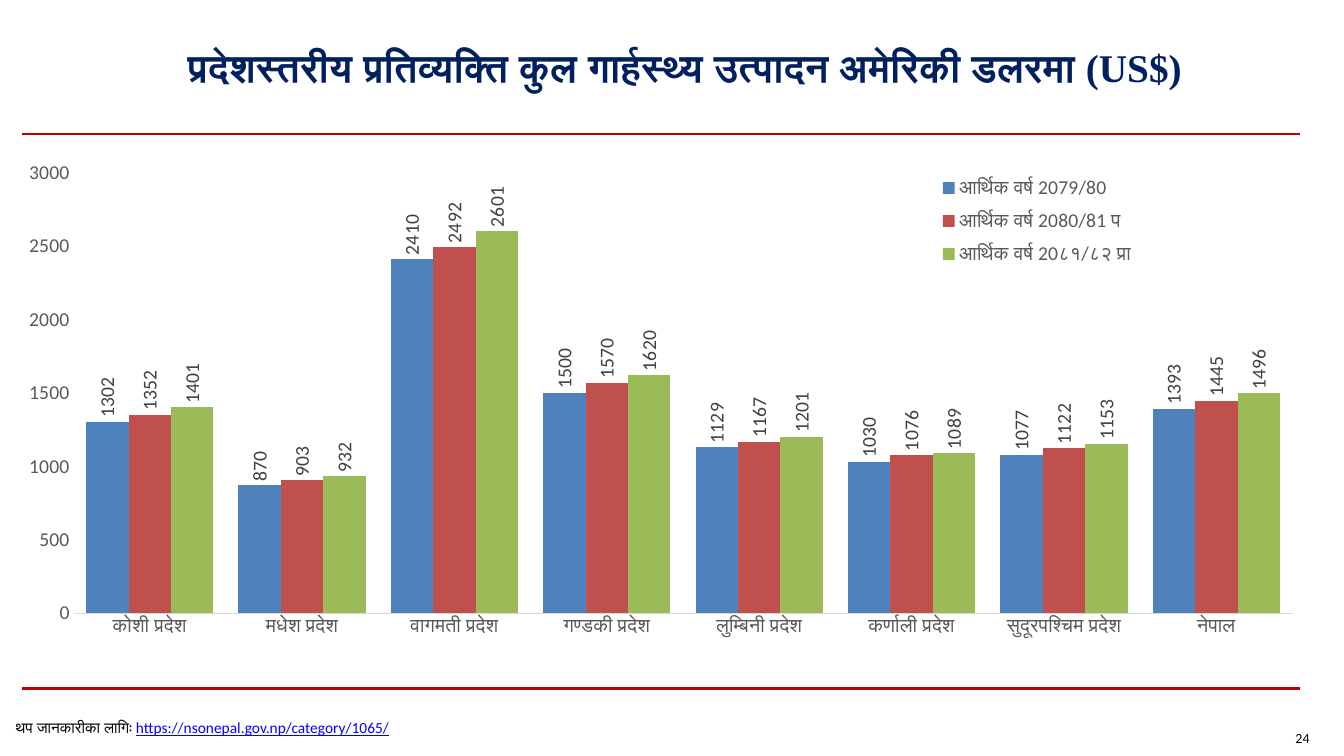
"""Build the slide on provincial GDP per person in US dollars."""
from lxml import etree
from pptx import Presentation
from pptx.chart.data import CategoryChartData
from pptx.dml.color import RGBColor
from pptx.enum.chart import XL_CHART_TYPE, XL_LABEL_POSITION, XL_LEGEND_POSITION, XL_TICK_MARK
from pptx.enum.shapes import MSO_CONNECTOR
from pptx.enum.text import MSO_ANCHOR, PP_ALIGN
from pptx.oxml import parse_xml
from pptx.oxml.ns import nsdecls, qn
from pptx.util import Pt

PX = 9144
COLUMN = XL_CHART_TYPE.COLUMN_CLUSTERED
OUTSIDE = XL_LABEL_POSITION.OUTSIDE_END
BOTTOM = XL_LEGEND_POSITION.BOTTOM
NO_TICK = XL_TICK_MARK.NONE
STRAIGHT = MSO_CONNECTOR.STRAIGHT
MIDDLE = MSO_ANCHOR.MIDDLE
CENTER = PP_ALIGN.CENTER


def style(font, size, color, name="Calibri"):
    font.size, font.name, font.bold = Pt(size), name, False
    font.color.rgb = RGBColor.from_string(color)


def layout(x, y, w, h, inner=""):
    return parse_xml(
        f'<c:layout {nsdecls("c")}><c:manualLayout>{inner}'
        '<c:xMode val="edge"/><c:yMode val="edge"/>'
        f'<c:x val="{x}"/><c:y val="{y}"/><c:w val="{w}"/><c:h val="{h}"/>'
        '</c:manualLayout></c:layout>')


deck = Presentation()
deck.slide_width, deck.slide_height = 1333 * PX, 750 * PX
slide = deck.slides.add_slide(deck.slide_layouts[5])
shapes = slide.shapes

for y in (133, 683):
    rule = shapes.add_connector(STRAIGHT, 22 * PX, y * PX, 1289 * PX, y * PX)
    rule.line.color.rgb = RGBColor.from_string("C00000")
    rule.line.width = Pt(1.5)
    etree.SubElement(rule._element.spPr, qn("a:effectLst"))

title = shapes.title
title.left, title.top, title.width, title.height = (n * PX for n in (125, 25, 1108, 77))
title.text_frame.text = "प्रदेशस्तरीय प्रतिव्यक्ति कुल गार्हस्थ्य उत्पादन अमेरिकी डलरमा (US$)"
title.text_frame.vertical_anchor = MIDDLE
head = title.text_frame.paragraphs[0]
head.alignment, head.line_spacing = CENTER, 1.14
style(head.font, 28, "002060", "Times New Roman")
head.font.bold = True

data = CategoryChartData(number_format="0")
data.categories = [
    "कोशी प्रदेश", "मधेश प्रदेश", "वागमती प्रदेश", "गण्डकी प्रदेश",
    "लुम्बिनी प्रदेश", "कर्णाली प्रदेश", "सुदूरपश्चिम प्रदेश", "नेपाल"]
years = [
    ("आर्थिक वर्ष 2079/80", "4F81BD", (1302, 870, 2410, 1500, 1129, 1030, 1077, 1393)),
    ("आर्थिक वर्ष 2080/81 प", "C0504D", (1352, 903, 2492, 1570, 1167, 1076, 1122, 1445)),
    ("आर्थिक वर्ष 20८१/८२ प्रा", "9BBB59", (1401, 932, 2601, 1620, 1201, 1089, 1153, 1496))]
for name, color, vals in years:
    data.add_series(name, vals)
chart = shapes.add_chart(COLUMN, 8 * PX, 150 * PX, 1300 * PX, 533 * PX, data).chart
style(chart.font, 14, "000000")
chart.has_title = False

plot = chart.plots[0]
plot.gap_width, plot.overlap, plot.vary_by_categories = 59, 0, False
for bars, (name, color, vals) in zip(plot.series, years):
    bars.format.fill.solid()
    bars.format.fill.fore_color.rgb = RGBColor.from_string(color)
    bars.invert_if_negative = False
    labels = bars.data_labels
    labels.show_value, labels.position = True, OUTSIDE
    labels.number_format, labels.number_format_is_linked = "0", False
    style(labels.font, 14, "404040")
    body = labels._element.find(f'{qn("c:txPr")}/{qn("a:bodyPr")}')
    body.set("rot", "-5400000")
    body.set("vert", "horz")

for axis in (chart.category_axis, chart.value_axis):
    axis.major_tick_mark = axis.minor_tick_mark = NO_TICK
    axis.has_major_gridlines = False
    style(axis.tick_labels.font, 14, "595959")
base = chart.category_axis.format.line
base.color.rgb = RGBColor.from_string("D9D9D9")
base.width = Pt(0.75)
scale = chart.value_axis
scale.format.line.fill.background()
scale.minimum_scale, scale.maximum_scale, scale.major_unit = 0, 3000, 500
scale.tick_labels.number_format = "0"
scale.tick_labels.number_format_is_linked = False

chart.has_legend = True
legend = chart.legend
legend.position, legend.include_in_layout = BOTTOM, False
style(legend.font, 14, "595959")
for old in legend._element.findall(qn("c:layout")):
    legend._element.remove(old)
legend._element.find(qn("c:legendPos")).addnext(layout(0.7, 0.03, 0.17, 0.2))
area = chart._chartSpace.chart.plotArea
for old in area.findall(qn("c:layout")):
    area.remove(old)
area.insert(0, layout(0.05, 0.04, 0.93, 0.82, '<c:layoutTarget val="inner"/>'))

notes = [
    ((1275, 719, 52, 26), 10, [("24", "000000")]),
    ((6, 708, 617, 33), 11, [
        ("थप जानकारीका लागिः ", "000000"),
        ("https://nsonepal.gov.np/category/1065/", "0000FF")])]
for spot, size, parts in notes:
    frame = shapes.add_textbox(*(n * PX for n in spot)).text_frame
    frame.word_wrap = True
    for text, color in parts:
        run = frame.paragraphs[0].add_run()
        run.text = text
        style(run.font, size, color)
        run.font.underline = color == "0000FF"

deck.save("out.pptx")
